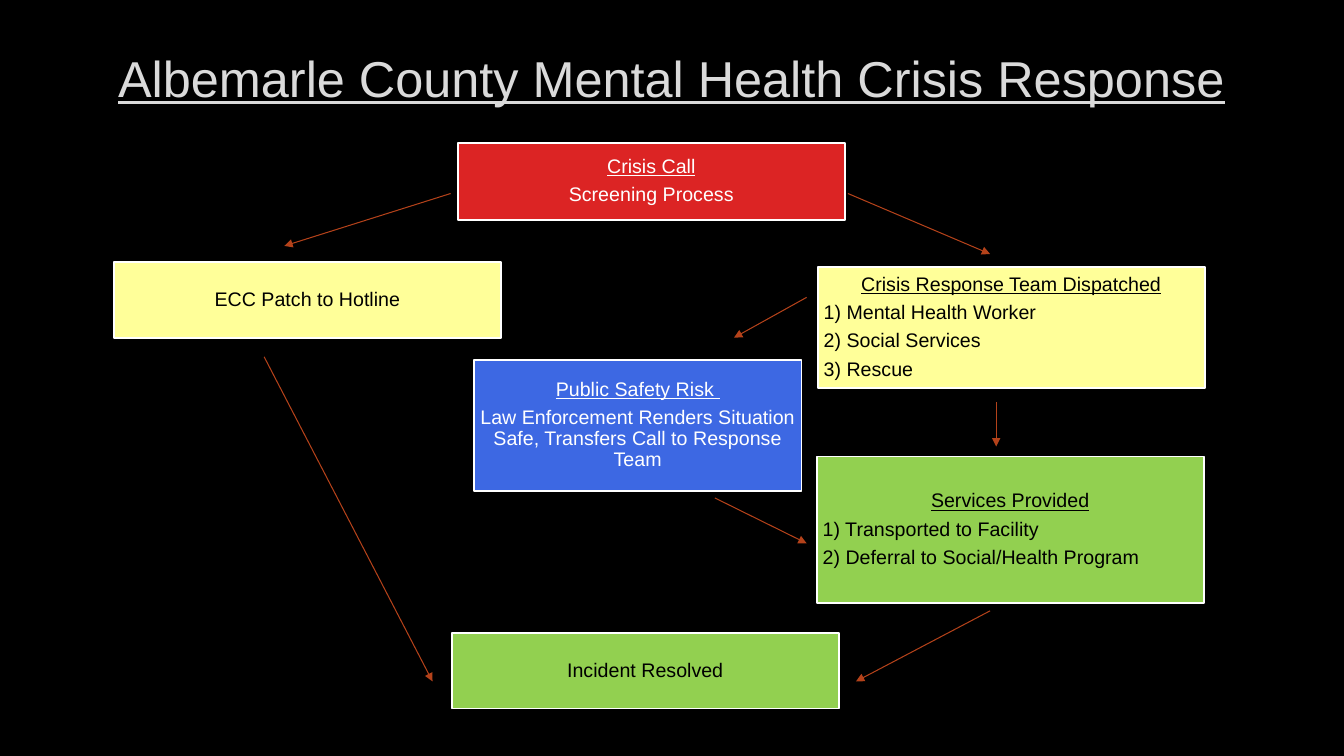
"""Build the county mental health crisis response flowchart slide."""
from lxml import etree
from pptx import Presentation
from pptx import util as u
from pptx.dml.color import RGBColor
from pptx.enum import shapes, text
from pptx.oxml import ns

PX = 9144
BLACK = RGBColor(0x00, 0x00, 0x00)
WHITE = RGBColor(0xFF, 0xFF, 0xFF)
SILVER = RGBColor(0xDA, 0xDA, 0xDA)
YELLOW = RGBColor(0xFF, 0xFF, 0x99)
RED = RGBColor(0xDC, 0x24, 0x24)
GREEN = RGBColor(0x92, 0xD0, 0x50)
BLUE = RGBColor(0x3D, 0x68, 0xE3)
RUST = RGBColor(0xB4, 0x42, 0x1A)


def scale(*sizes):
    return [u.Emu(size * PX) for size in sizes]


def style(para, size, color, under):
    para.alignment = text.PP_ALIGN.CENTER
    for run in para.runs:
        run.font.name = "Arial"
        run.font.size = u.Pt(size)
        run.font.color.rgb = color
        run.font.underline = under


deck = Presentation()
deck.slide_width, deck.slide_height = scale(1333, 750)
slide = deck.slides.add_slide(deck.slide_layouts[6])
slide.background.fill.solid()
slide.background.fill.fore_color.rgb = BLACK

title = slide.shapes.add_textbox(*scale(100, 17, 1132, 119)).text_frame
title.word_wrap = True
title.vertical_anchor = text.MSO_ANCHOR.MIDDLE
title.text = "Albemarle County Mental Health Crisis Response"
style(title.paragraphs[0], 36, SILVER, True)

steps = [
    (113, 260, 384, 75, YELLOW, BLACK, "ECC Patch to Hotline"),
    (454, 142, 384, 76, RED, WHITE, "Crisis Call\nScreening Process"),
    (810, 453, 384, 145, GREEN, BLACK,
     "Services Provided\n1) Transported to Facility\n2) Deferral to Social/Health Program"),
    (811, 265, 384, 120, YELLOW, BLACK,
     "Crisis Response Team Dispatched\n1) Mental Health Worker\n2) Social Services\n3) Rescue"),
    (470, 357, 325, 130, BLUE, WHITE,
     "Public Safety Risk \nLaw Enforcement Renders Situation Safe, Transfers Call to Response Team"),
    (448, 628, 384, 75, GREEN, BLACK, "Incident Resolved"),
]
for left, top, width, height, fill, ink, words in steps:
    box = slide.shapes.add_shape(
        shapes.MSO_SHAPE.RECTANGLE, *scale(left, top, width, height))
    box.shadow.inherit = False
    box.fill.solid()
    box.fill.fore_color.rgb = fill
    box.line.color.rgb = WHITE
    box.line.width = u.Pt(1.25)
    frame = box.text_frame
    frame.word_wrap = True
    frame.vertical_anchor = text.MSO_ANCHOR.MIDDLE
    frame.margin_left, frame.margin_top, frame.margin_right, frame.margin_bottom = scale(6, 6, 6, 6)
    frame.text = words
    for row, para in enumerate(frame.paragraphs):
        style(para, 14, ink, row == 0 and len(frame.paragraphs) > 1)
        para.line_spacing = 0.9
        para.space_after = u.Pt(5)
        if para.text[0].isdigit():
            para.alignment = text.PP_ALIGN.LEFT

arrows = [
    (841, 192, 982, 252),
    (447, 192, 282, 244),
    (800, 295, 728, 335),
    (988, 399, 988, 443),
    (982, 606, 849, 676),
    (262, 354, 429, 676),
    (709, 494, 800, 539),
]
for ends in arrows:
    arrow = slide.shapes.add_connector(shapes.MSO_CONNECTOR.STRAIGHT, *scale(*ends))
    arrow.line.color.rgb = RUST
    arrow.line.width = u.Pt(0.75)
    props = arrow.element.spPr
    etree.SubElement(props.find(ns.qn("a:ln")), ns.qn("a:tailEnd"), type="triangle")
    etree.SubElement(props, ns.qn("a:effectLst"))

deck.save("out.pptx")
